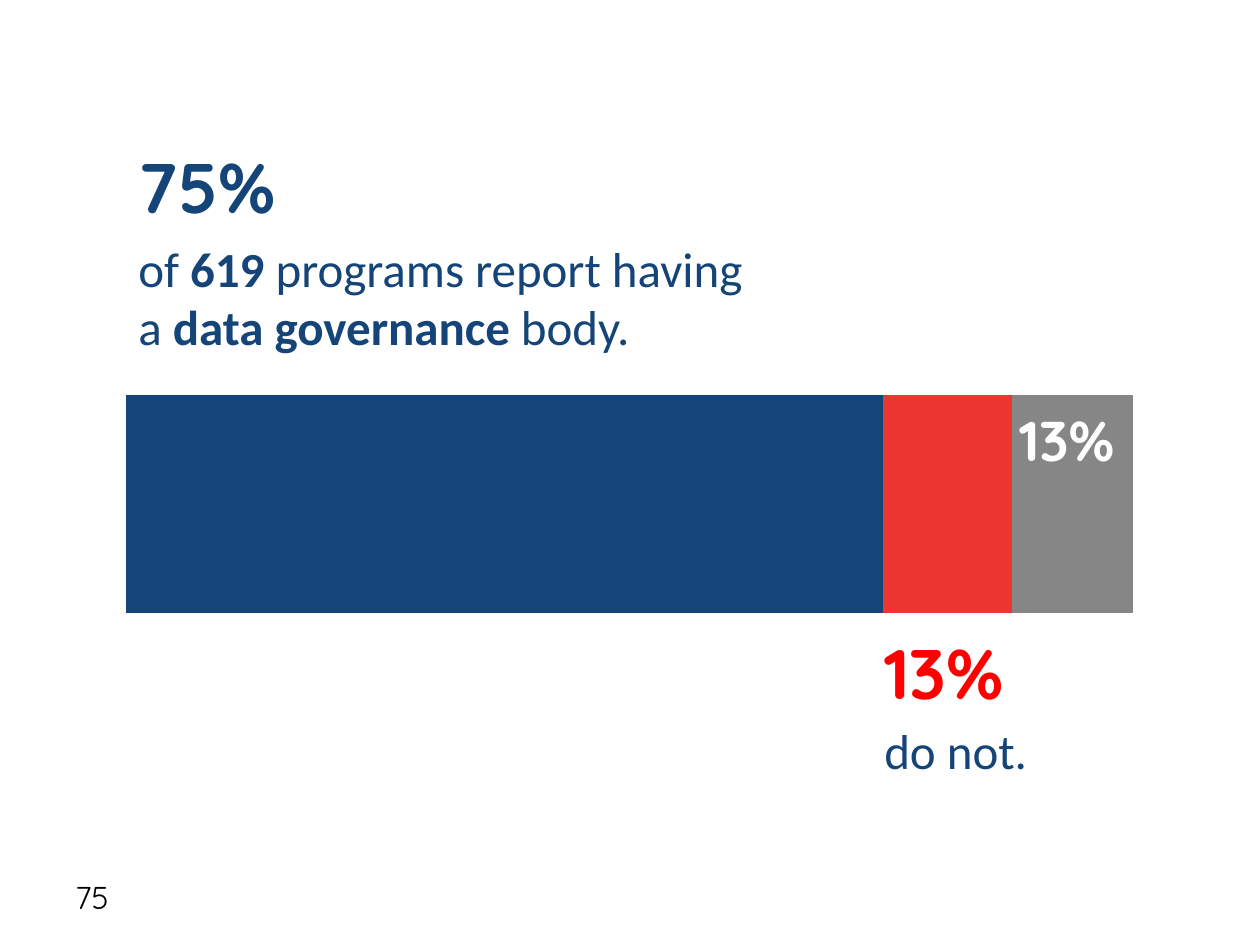
from dataclasses import dataclass

from lxml import etree
from pptx import Presentation
from pptx.chart.data import CategoryChartData
from pptx.dml.color import RGBColor
from pptx.enum.chart import XL_CHART_TYPE
from pptx.enum.text import MSO_ANCHOR, MSO_AUTO_SIZE
from pptx.oxml.ns import qn
from pptx.util import Inches, Pt

STACKED = XL_CHART_TYPE.BAR_STACKED
MIDDLE = MSO_ANCHOR.MIDDLE
GROW = MSO_AUTO_SIZE.SHAPE_TO_FIT_TEXT


@dataclass(frozen=True)
class Theme:
    """Colours, fonts and type sizes of the slide."""
    navy: str = "154578"
    coral: str = "ED3532"
    gray: str = "868687"
    red: str = "FF0000"
    white: str = "FFFFFF"
    black: str = "000000"
    body: str = "Calibri"
    head: str = "Quicksand"
    small: int = 18
    text: int = 28
    label: int = 32
    big: int = 40


THEME = Theme()


def style(font, face, size, color, bold=False):
    """Set the face, size, colour and weight of a font."""
    font.name = face
    font.size = Pt(size)
    font.bold = bold
    font.color.rgb = RGBColor.from_string(color)


def add_text(slide, box, runs, face, size, color):
    """Add a text box at box from (text, bold) runs."""
    frame = slide.shapes.add_textbox(*map(Inches, box)).text_frame
    frame.word_wrap = True
    frame.auto_size = GROW
    for text, bold in runs:
        run = frame.paragraphs[0].add_run()
        run.text = text
        style(run.font, face, size, color, bold)
    return frame


def set_plot(chart, area):
    """Fix the inner plot area as fractions of the chart."""
    plot = chart._chartSpace.find(".//" + qn("c:plotArea"))
    layout = plot.find(qn("c:layout"))
    if layout is None:
        layout = etree.Element(qn("c:layout"))
        plot.insert(0, layout)
    manual = etree.SubElement(layout, qn("c:manualLayout"))
    parts = [("layoutTarget", "inner"), ("xMode", "edge"), ("yMode", "edge")]
    parts += zip("xywh", area)
    for tag, value in parts:
        etree.SubElement(manual, qn("c:" + tag)).set("val", str(value))


def add_bar(slide, box):
    """Add the stacked bar of answers at box."""
    parts = [
        ("Series 1", 100, THEME.navy),
        ("Series 2", 17, THEME.coral),
        ("Series 3", 17, THEME.gray),
    ]
    data = CategoryChartData()
    data.categories = ["1"]
    for name, value, _ in parts:
        data.add_series(name, [value])
    chart = slide.shapes.add_chart(STACKED, *map(Inches, box), data).chart
    style(chart.font, THEME.body, THEME.small, THEME.black)
    chart.has_legend = False
    chart.has_title = False
    chart.category_axis.visible = False
    axis = chart.value_axis
    axis.visible = False
    axis.has_major_gridlines = False
    axis.minimum_scale, axis.maximum_scale = 0, 133
    axis.major_unit = 27
    axis.tick_labels.number_format = "0%"
    axis.tick_labels.number_format_is_linked = False
    plot = chart.plots[0]
    plot.gap_width, plot.overlap = 150, 100
    plot.vary_by_categories = False
    for series, (_, _, color) in zip(plot.series, parts):
        series.format.fill.solid()
        series.format.fill.fore_color.rgb = RGBColor.from_string(color)
    set_plot(chart, (0.02, 0.05, 0.96, 0.93))


def add_claim(slide, box, share, color, gap, runs, high):
    """Add a large share at box with its sentence gap inches below its top."""
    left, top, width, _ = box
    add_text(slide, box, [(share, True)], THEME.head, THEME.big, color)
    below = (left, top + gap, width, high)
    add_text(slide, below, runs, THEME.body, THEME.text, THEME.navy)


def add_number(slide, box):
    """Add the slide number at box."""
    frame = add_text(
        slide, box, [("75", False)], THEME.head, THEME.small, THEME.black)
    frame.auto_size = MSO_AUTO_SIZE.NONE
    frame.vertical_anchor = MIDDLE


def main():
    """Build and save the slide."""
    deck = Presentation()
    deck.slide_width, deck.slide_height = Inches(10), Inches(7.5)
    slide = deck.slides.add_slide(deck.slide_layouts[6])
    add_bar(slide, (0.83, 1.61, 8.33, 4.64))
    add_number(slide, (0.5, 6.92, 2.33, 0.4))
    body = [
        ("of ", False),
        ("619", True),
        (" programs report having a ", False),
        ("data governance ", True),
        ("body.", False),
    ]
    add_claim(slide, (1, 1.09, 5.17, 0.77), "75%", THEME.navy,
              0.75, body, 1.04)
    add_claim(slide, (6.92, 4.95, 4.83, 0.77), "13%", THEME.red,
              0.72, [("do not.", False)], 0.57)
    add_text(slide, (7.99, 3.17, 1.33, 0.64), [("13%", True)],
             THEME.head, THEME.label, THEME.white)
    deck.save("out.pptx")


if __name__ == "__main__":
    main()
